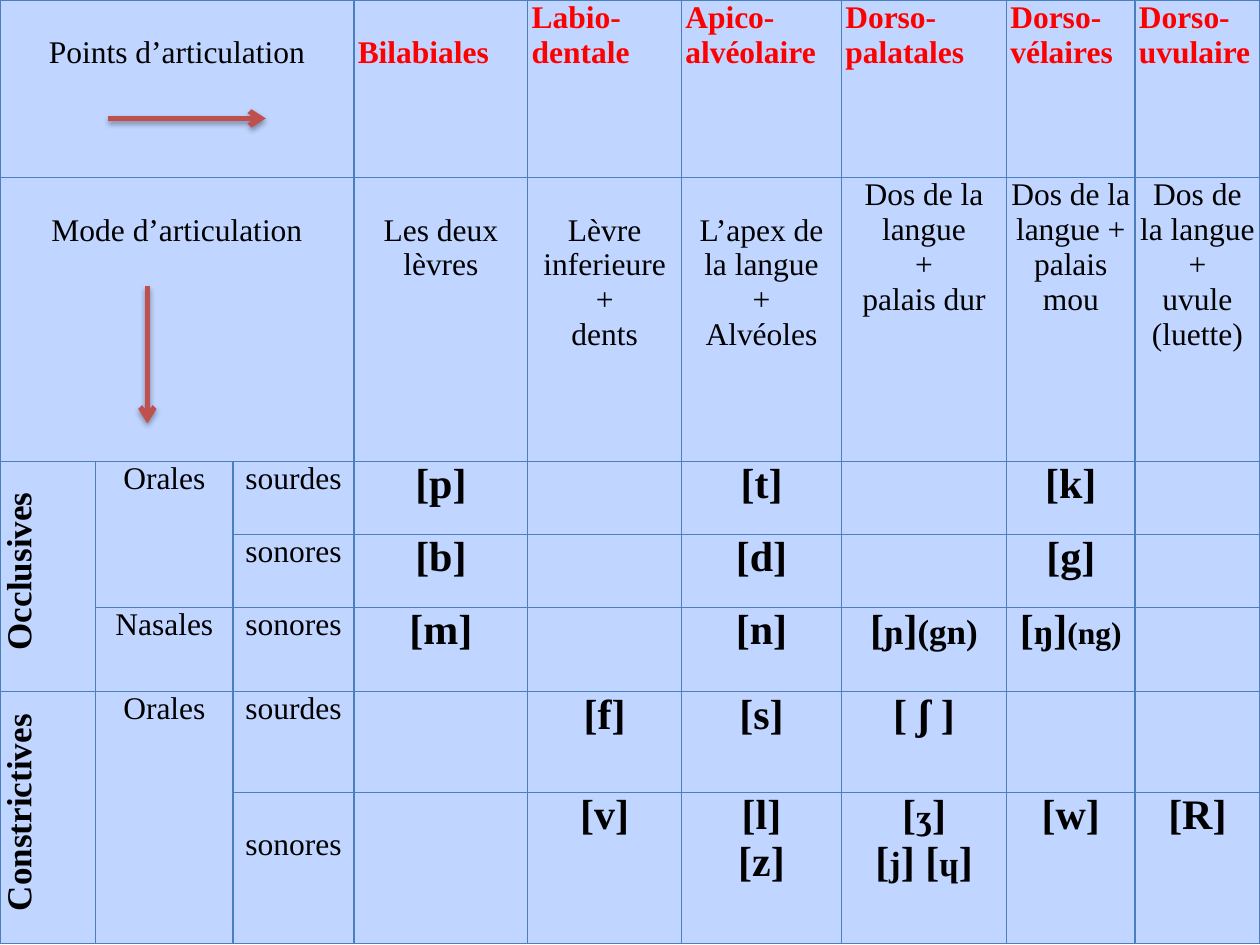
from lxml.etree import SubElement
from pptx import Presentation
from pptx.dml.color import RGBColor
from pptx.enum.shapes import MSO_CONNECTOR
from pptx.enum.text import PP_ALIGN
from pptx.oxml import parse_xml
from pptx.oxml.ns import nsdecls, qn
from pptx.util import Inches, Pt

FONT = "Times New Roman"
CELL_FILL = RGBColor(0xC0, 0xD5, 0xFF)
BORDER = RGBColor(0x4B, 0x7E, 0xBC)
BLACK = RGBColor(0, 0, 0)
RED = RGBColor(0xFF, 0, 0)
ARROW = RGBColor(0xC0, 0x50, 0x4D)

COLUMN_WIDTHS = [0.76, 1.09, 0.96, 1.38, 1.22, 1.27, 1.31, 1.02, 0.99]
ROW_HEIGHTS = [1.41, 2.25, 0.58, 0.58, 0.67, 0.8, 1.2]
FIRST_SOUND_COLUMN = 3
FIRST_SOUND_ROW = 2
SIDE_MARGIN = 0.03
LINE_DROP = 0.28  # one 18 pt line

PLACES = ["Bilabiales", "Labio-dentale", "Apico-alvéolaire",
          "Dorso-palatales", "Dorso-vélaires", "Dorso-uvulaire"]
ORGANS = [
    ["Les deux lèvres"],
    ["Lèvre inferieure", "+", "dents"],
    ["L’apex de la langue", "+", "Alvéoles"],
    ["Dos de la langue", "+", "palais dur"],
    ["Dos de la langue + palais mou"],
    ["Dos de la langue +", "uvule (luette)"],
]

# (row, column, rows spanned, columns spanned, text)
AXES = [(0, 0, 1, 3, "Points d’articulation"),
        (1, 0, 1, 3, "Mode d’articulation")]
MODES = [(2, 0, 3, 1, "Occlusives"), (5, 0, 2, 1, "Constrictives")]
PASSAGES = [(2, 1, 2, 1, "Orales"), (4, 1, 1, 1, "Nasales"),
            (5, 1, 2, 1, "Orales")]
VOICINGS = ["sourdes", "sonores", "sonores", "sourdes", "sonores"]

# Each sound is a list of lines; a line is text or (text, size) pieces
SOUNDS = [
    [["[p]"], [], ["[t]"], [], ["[k]"], []],
    [["[b]"], [], ["[d]"], [], ["[g]"], []],
    [["[m]"], [], ["[n]"],
     [[("[", 24), ("ɲ", 20), ("]", 24), ("(gn)", 20)]],
     [[("[", 24), ("ŋ", 20), ("]", 24), ("(ng)", 18)]], []],
    [[], ["[f]"], ["[s]"], ["[ ʃ ]"], [], []],
    [[], ["[v]"], ["[l]", "[z]"],
     [[("[", 24), ("ʒ", 20), ("]", 24)],
      [("[", 24), ("j", 20), ("] [", 24), ("ɥ", 20), ("]", 24)]],
     ["[w]"], ["[R]"]],
]

ARROWS = [((1.17, 2.27), (1.17, 3.36)), ((0.86, 0.94), (2.11, 0.94))]


def style_cell(cell):
    """Give a cell its margins, borders and fill."""
    cell.margin_left = cell.margin_right = Inches(SIDE_MARGIN)
    cell.margin_top = cell.margin_bottom = 0
    properties = cell._tc.get_or_add_tcPr()
    for side in ("lnL", "lnR", "lnT", "lnB"):
        properties.append(parse_xml(
            f'<a:{side} {nsdecls("a")} w="{Pt(0.75)}"><a:solidFill>'
            f'<a:srgbClr val="{BORDER}"/></a:solidFill></a:{side}>'))
    cell.fill.solid()
    cell.fill.fore_color.rgb = CELL_FILL


def write(cell, lines, size=18, bold=False, color=BLACK,
          align=PP_ALIGN.CENTER, dropped=False):
    """Fill a cell line by line; dropped starts the text one line lower."""
    if dropped:
        cell.margin_top = Inches(LINE_DROP)
    frame = cell.text_frame
    for index, line in enumerate(lines):
        paragraph = frame.add_paragraph() if index else frame.paragraphs[0]
        paragraph.alignment = align
        pieces = [(line, size)] if isinstance(line, str) else line
        for text, piece_size in pieces:
            run = paragraph.add_run()
            run.text = text
            run.font.name = FONT
            run.font.size = Pt(piece_size)
            run.font.bold = bold
            run.font.color.rgb = color


def merged(table, row, column, rows, columns):
    cell = table.cell(row, column)
    if rows * columns > 1:
        cell.merge(table.cell(row + rows - 1, column + columns - 1))
    return cell


def add_arrow(slide, start, end):
    arrow = slide.shapes.add_connector(
        MSO_CONNECTOR.STRAIGHT, *map(Inches, start + end))
    arrow.line.color.rgb = ARROW
    arrow.line.width = Pt(3)
    SubElement(arrow.line._get_or_add_ln(), qn("a:tailEnd"), type="arrow")
    arrow._element.spPr.append(parse_xml(
        f'<a:effectLst {nsdecls("a")}><a:outerShdw blurRad="{Pt(3.1)}" '
        f'dist="{Pt(1.8)}" dir="5400000" rotWithShape="0">'
        '<a:srgbClr val="000000"><a:alpha val="35000"/></a:srgbClr>'
        '</a:outerShdw></a:effectLst>'))


def fill_headings(table):
    for *area, text in AXES:
        write(merged(table, *area), [text], dropped=True)
    for column, (place, organ) in enumerate(zip(PLACES, ORGANS)):
        column += FIRST_SOUND_COLUMN
        write(table.cell(0, column), [place], bold=True, color=RED,
              align=PP_ALIGN.LEFT, dropped=place == "Bilabiales")
        write(table.cell(1, column), organ,
              dropped=not organ[0].startswith("Dos"))
    for *area, text in MODES:
        cell = merged(table, *area)
        write(cell, [text], size=20, bold=True)
        cell._tc.get_or_add_tcPr().set("vert", "vert270")
        paragraph = cell.text_frame.paragraphs[0]
        paragraph._p.get_or_add_pPr().set("marL", str(Inches(0.08)))
    for *area, text in PASSAGES:
        write(merged(table, *area), [text])


def fill_sounds(table):
    last = len(SOUNDS) - 1
    for index, (voicing, sounds) in enumerate(zip(VOICINGS, SOUNDS)):
        row = FIRST_SOUND_ROW + index
        write(table.cell(row, FIRST_SOUND_COLUMN - 1), [voicing],
              dropped=index == last)
        for column, lines in enumerate(sounds, FIRST_SOUND_COLUMN):
            write(table.cell(row, column), lines, size=24, bold=True)


def main():
    presentation = Presentation()
    presentation.slide_width = Inches(10)
    presentation.slide_height = Inches(7.5)
    slide = presentation.slides.add_slide(presentation.slide_layouts[6])

    table = slide.shapes.add_table(
        len(ROW_HEIGHTS), len(COLUMN_WIDTHS), 0, 0,
        Inches(sum(COLUMN_WIDTHS)), Inches(sum(ROW_HEIGHTS))).table
    for column, width in zip(table.columns, COLUMN_WIDTHS):
        column.width = Inches(width)
    for row, height in zip(table.rows, ROW_HEIGHTS):
        row.height = Inches(height)
    for cell in table.iter_cells():
        style_cell(cell)
    fill_headings(table)
    fill_sounds(table)

    for start, end in ARROWS:
        add_arrow(slide, start, end)
    presentation.save("out.pptx")


if __name__ == "__main__":
    main()
